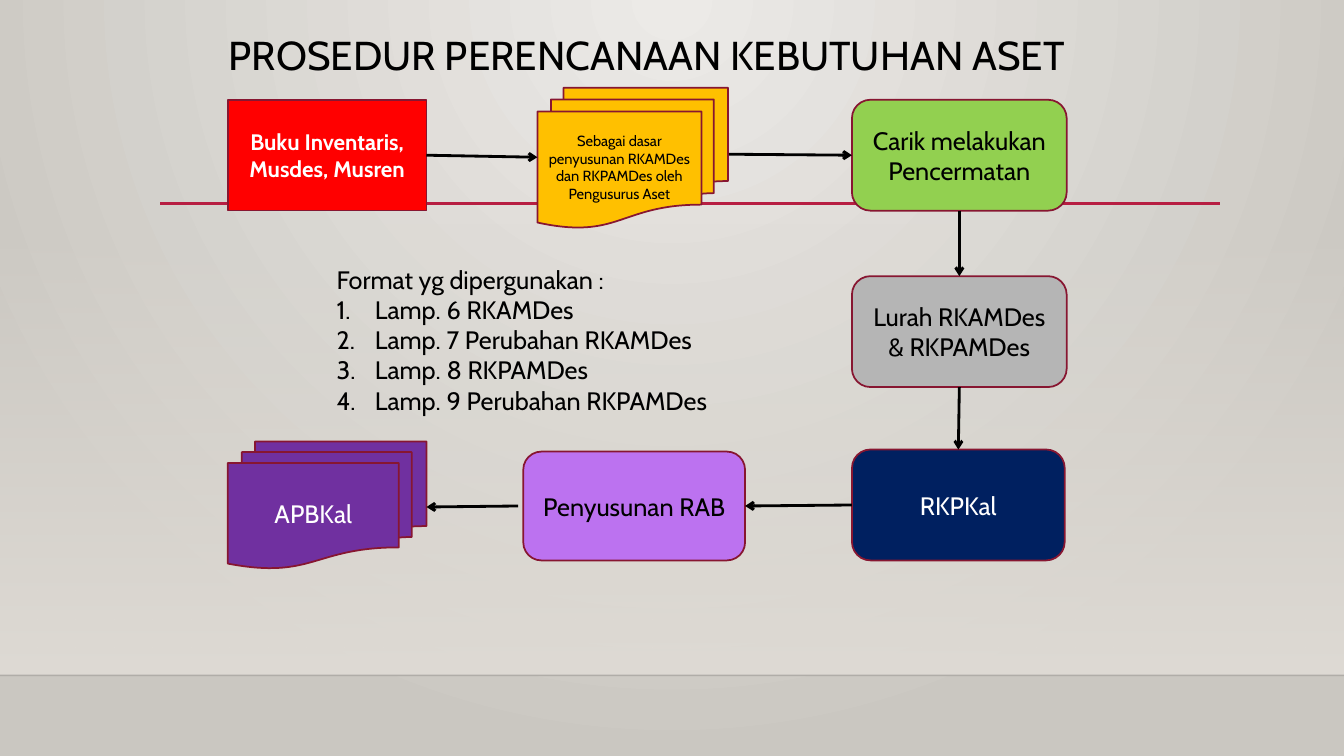
from lxml import etree
from pptx import Presentation
from pptx import util as u
from pptx.dml.color import RGBColor
from pptx.enum import shapes, text
from pptx.oxml import parse_xml
from pptx.oxml.ns import nsdecls, qn

BLACK = RGBColor(0x00, 0x00, 0x00)
WHITE = RGBColor(0xFF, 0xFF, 0xFF)
RED = RGBColor(0xFF, 0x00, 0x00)
AMBER = RGBColor(0xFF, 0xC0, 0x00)
GREEN = RGBColor(0x92, 0xD0, 0x50)
GREY = RGBColor(0xB5, 0xB5, 0xB5)
NAVY = RGBColor(0x00, 0x20, 0x60)
LILAC = RGBColor(0xBC, 0x72, 0xF0)
PURPLE = RGBColor(0x70, 0x30, 0xA0)
OUTLINE = RGBColor(0x87, 0x16, 0x31)
CRIMSON = RGBColor(0xB7, 0x1E, 0x42)
WALL_LIGHT = RGBColor(0xEC, 0xEA, 0xE7)
WALL_DARK = RGBColor(0xCA, 0xC7, 0xC1)
WALL_FADE = RGBColor(0xDF, 0xDB, 0xD5)

SHAPE = shapes.MSO_SHAPE
TOP, LEFT, BOTTOM, RIGHT = range(4)


class ProcedureSlide:
    font_name = "Cabin"

    def __init__(self, presentation):
        self.slide = presentation.slides.add_slide(presentation.slide_layouts[5])

    def style(self, paragraph, size, color, bold=False):
        font = paragraph.font
        font.name, font.size, font.bold = self.font_name, u.Pt(size), bold
        font.color.rgb = color

    def set_alpha(self, element, percent):
        color = element.find(".//" + qn("a:srgbClr"))
        etree.SubElement(color, qn("a:alpha")).set("val", str(percent * 1000))

    def gradient(self, fill, first, last):
        fill.gradient()
        for stop, color in zip(fill.gradient_stops, (first, last)):
            stop.color.rgb = color

    def background(self):
        self.gradient(self.slide.background.fill, WALL_LIGHT, WALL_DARK)
        linear = self.slide.element.find(".//" + qn("a:lin"))
        linear.getparent().replace(linear, parse_xml(
            f'<a:path {nsdecls("a")} path="circle">'
            '<a:fillToRect l="43000" t="0" r="43000" b="100000"/></a:path>'))

    def fade(self, left, top, width, height):
        shape = self.slide.shapes.add_shape(
            SHAPE.RECTANGLE, *map(u.Inches, (left, top, width, height)))
        shape.shadow.inherit = False
        shape.line.fill.background()
        self.gradient(shape.fill, WALL_FADE, WALL_FADE)
        shape.fill.gradient_angle = 270
        self.set_alpha(shape.element.spPr, 0)

    def title(self, wording, left, top, width, height):
        shape = self.slide.shapes.title
        shape.left, shape.top, shape.width, shape.height = map(
            u.Inches, (left, top, width, height))
        frame = shape.text_frame
        frame.text = wording
        frame.vertical_anchor = text.MSO_ANCHOR.MIDDLE
        paragraph = frame.paragraphs[0]
        paragraph.alignment = text.PP_ALIGN.LEFT
        paragraph.line_spacing = 0.9
        self.style(paragraph, 28.8, BLACK)

    def step(self, kind, wording, left, top, width, height, fill,
             color=BLACK, size=18, bold=False):
        shape = self.slide.shapes.add_shape(
            kind, *map(u.Inches, (left, top, width, height)))
        shape.shadow.inherit = False
        shape.fill.solid()
        shape.fill.fore_color.rgb = fill
        shape.line.color.rgb = OUTLINE
        shape.line.width = u.Pt(1.25)
        frame = shape.text_frame
        frame.word_wrap = True
        frame.vertical_anchor = text.MSO_ANCHOR.MIDDLE
        frame.text = wording
        paragraph = frame.paragraphs[0]
        paragraph.alignment = text.PP_ALIGN.CENTER
        self.style(paragraph, size, color, bold)
        return shape

    def line(self, start, end, color, width):
        connector = self.slide.shapes.add_connector(
            shapes.MSO_CONNECTOR.STRAIGHT, *map(u.Inches, start + end))
        connector.line.color.rgb = color
        connector.line.width = u.Pt(width)
        etree.SubElement(connector.element.spPr, qn("a:effectLst"))
        return connector

    def arrow(self, start, end, begin=None, finish=None):
        connector = self.line(start, end, BLACK, 2)
        outline = connector.line._get_or_add_ln()
        etree.SubElement(outline, qn("a:tailEnd")).set("type", "arrow")
        if begin:
            connector.begin_connect(*begin)
        if finish:
            connector.end_connect(*finish)

    def numbered_list(self, heading, items, left, top, width, height):
        box = self.slide.shapes.add_textbox(
            *map(u.Inches, (left, top, width, height)))
        frame = box.text_frame
        frame.word_wrap = True
        frame.text = "\n".join([heading, *items])
        for index, paragraph in enumerate(frame.paragraphs):
            if index:
                properties = paragraph._p.get_or_add_pPr()
                properties.set("marL", str(u.Inches(0.38)))
                properties.set("indent", str(u.Inches(-0.38)))
                etree.SubElement(properties, qn("a:buFont")).set("typeface", "+mj-lt")
                etree.SubElement(properties, qn("a:buAutoNum")).set("type", "arabicPeriod")
            self.style(paragraph, 18, BLACK)


def main():
    presentation = Presentation()
    presentation.slide_width = u.Inches(13.33)
    presentation.slide_height = u.Inches(7.5)
    page = ProcedureSlide(presentation)

    page.background()
    page.fade(0, 2.21, 13.33, 4.49)
    floor = page.line((0, 6.7), (13.33, 6.7), BLACK, 1)
    page.set_alpha(floor.element.spPr, 20)
    page.line((1.59, 2.02), (12.1, 2.02), CRIMSON, 2.5)
    page.title("PROSEDUR PERENCANAAN KEBUTUHAN ASET", 2.17, 0.3, 9, 0.54)

    inventory = page.step(SHAPE.RECTANGLE, "Buku Inventaris, Musdes, Musren",
                          2.26, 0.99, 1.97, 1.1, RED, WHITE, 16, True)
    page.step(SHAPE.FLOWCHART_MULTIDOCUMENT,
              "Sebagai dasar penyusunan RKAMDes dan RKPAMDes oleh Pengusurus Aset",
              5.33, 0.87, 1.89, 1.39, AMBER, size=10.5)
    review = page.step(SHAPE.ROUNDED_RECTANGLE, "Carik melakukan Pencermatan",
                       8.45, 0.99, 2.13, 1.1, GREEN)
    headman = page.step(SHAPE.ROUNDED_RECTANGLE, "Lurah RKAMDes & RKPAMDes",
                        8.45, 2.74, 2.13, 1.1, GREY)
    work_plan = page.step(SHAPE.ROUNDED_RECTANGLE, "RKPKal",
                          8.45, 4.46, 2.11, 1.1, NAVY, WHITE)
    cost_plan = page.step(SHAPE.ROUNDED_RECTANGLE, "Penyusunan RAB",
                          5.19, 4.48, 2.2, 1.08, LILAC)
    page.step(SHAPE.FLOWCHART_MULTIDOCUMENT, "APBKal",
              2.26, 4.38, 1.97, 1.26, PURPLE, WHITE)

    page.arrow((4.23, 1.55), (5.33, 1.56), begin=(inventory, RIGHT))
    page.arrow((7.23, 1.53), (8.45, 1.55), finish=(review, LEFT))
    page.arrow((9.51, 2.1), (9.52, 2.74), (review, BOTTOM), (headman, TOP))
    page.arrow((9.52, 3.84), (9.51, 4.46), (headman, BOTTOM), (work_plan, TOP))
    page.arrow((8.45, 5.01), (7.4, 5.02), (work_plan, LEFT), (cost_plan, RIGHT))
    page.arrow((5.14, 5.02), (4.23, 5.03))

    page.numbered_list("Format yg dipergunakan :",
                       ["Lamp. 6 RKAMDes", "Lamp. 7 Perubahan RKAMDes",
                        "Lamp. 8 RKPAMDes", "Lamp. 9 Perubahan RKPAMDes"],
                       3.24, 2.57, 4.84, 1.62)
    presentation.save("out.pptx")


if __name__ == "__main__":
    main()
